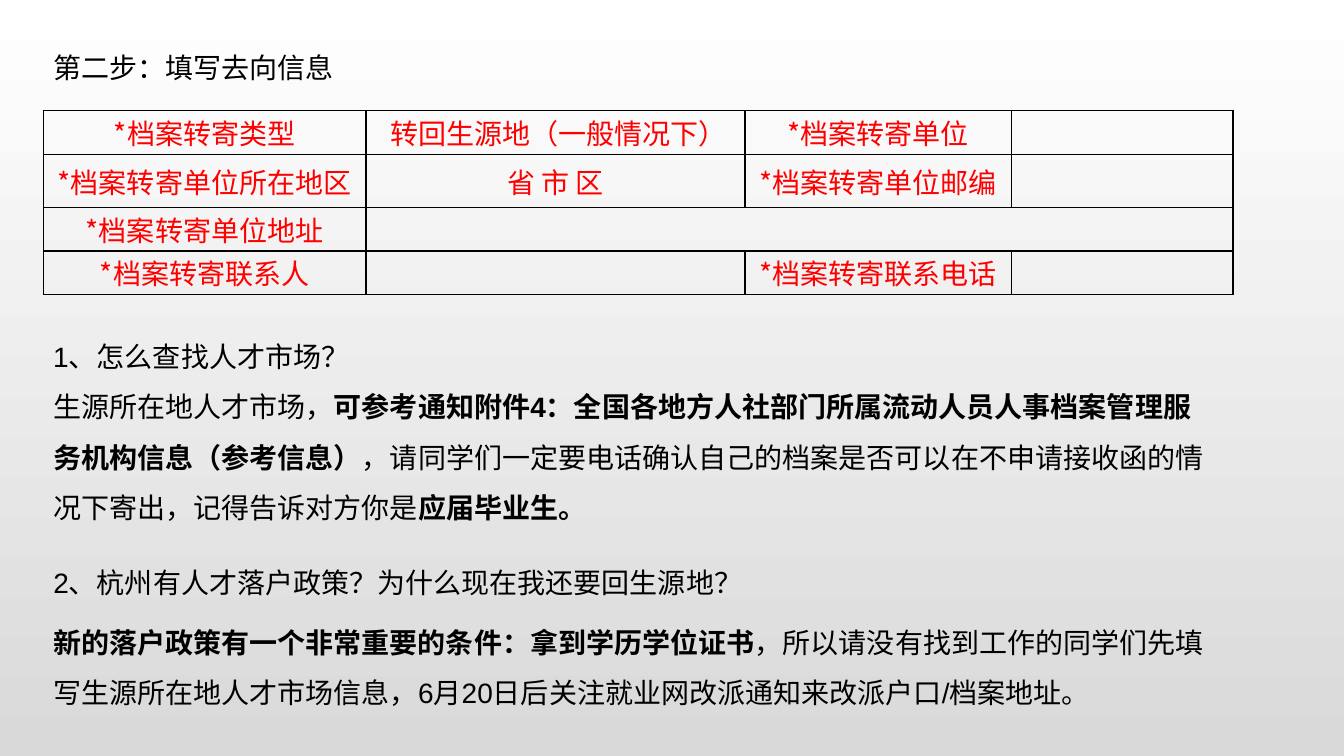
"""Build the slide on filling in where the student file is sent."""
from pptx import Presentation
from pptx import util as u
from pptx.dml.color import RGBColor
from pptx.enum import text
from pptx.oxml.xmlchemy import OxmlElement

HUES = {"ink": "000000", "red": "FF0000", "top": "FFFFFF", "base": "D9D9D9"}
LATIN, HAN = "Arial", "Noto Sans CJK SC"
SIZE = 20
WIDE, HIGH = 13.33, 7.5
LEFT, FULL = 0.43, 11.66

TITLE = "第二步：填写去向信息"
COLS = [3.2, 3.76, 2.64, 2.2]
ROWS = [0.43, 0.53, 0.43, 0.43]
FORM = [
    ["*档案转寄类型", " 转回生源地（一般情况下）", "*档案转寄单位", ""],
    ["*档案转寄单位所在地区", "省 市 区", "*档案转寄单位邮编", ""],
    ["*档案转寄单位地址", "", "", ""],
    ["*档案转寄联系人", "", "*档案转寄联系电话", ""],
]
NOTES = [
    (3.15, FULL, 2.12, [
        [("1、怎么查找人才市场？", False)],
        [("生源所在地人才市场，", False),
         ("可参考通知附件4：全国各地方人社部门所属流动人员人事档案管理服务机构信息（参考信息）", True),
         ("，请同学们一定要电话确认自己的档案是否可以在不申请接收函的情况下寄出，记得告诉对方你是", False),
         ("应届毕业生。", True)],
    ]),
    (5.39, 7.69, 0.6, [[("2、杭州有人才落户政策？为什么现在我还要回生源地？", False)]]),
    (5.99, FULL, 1.11, [
        [("新的落户政策有一个非常重要的条件：拿到学历学位证书", True),
         ("，所以请没有找到工作的同学们先填写生源所在地人才市场信息，"
          "6月20日后关注就业网改派通知来改派户口/档案地址。", False)],
    ]),
]


def hue(name):
    return RGBColor.from_string(HUES[name])


def style(para, color, face):
    font = para.font
    font.size, font.name = u.Pt(SIZE), face
    font.color.rgb = hue(color)
    han = OxmlElement("a:ea")
    han.set("typeface", HAN)
    para._p.pPr.find(".//{*}latin").addnext(han)


def write(shape, paras):
    frame = shape.text_frame
    frame.word_wrap = True
    frame.auto_size = text.MSO_AUTO_SIZE.NONE
    frame.vertical_anchor = text.MSO_ANCHOR.TOP
    for i, runs in enumerate(paras):
        para = frame.add_paragraph() if i else frame.paragraphs[0]
        para.line_spacing = 1.5
        para.alignment = text.PP_ALIGN.LEFT
        style(para, "ink", LATIN)
        for words, bold in runs:
            run = para.add_run()
            run.text, run.font.bold = words, bold


def border(cell):
    props = cell._tc.get_or_add_tcPr()
    for side in "LRTB":
        line = OxmlElement(f"a:ln{side}")
        line.set("w", str(u.Pt(1)))
        fill = OxmlElement("a:solidFill")
        color = OxmlElement("a:srgbClr")
        color.set("val", HUES["ink"])
        fill.append(color)
        line.append(fill)
        props.append(line)


def add_form(slide):
    box = [u.Inches(n) for n in (LEFT, 1.1, sum(COLS), sum(ROWS))]
    table = slide.shapes.add_table(len(ROWS), len(COLS), *box).table
    table.first_row = table.horz_banding = False
    for col, size in zip(table.columns, COLS):
        col.width = u.Inches(size)
    for r, (row, size) in enumerate(zip(FORM, ROWS)):
        table.rows[r].height = u.Inches(size)
        for c, words in enumerate(row):
            cell = table.cell(r, c)
            border(cell)
            cell.fill.background()
            cell.margin_left = cell.margin_right = u.Inches(0.07)
            cell.margin_top = cell.margin_bottom = 0
            cell.vertical_anchor = text.MSO_ANCHOR.MIDDLE
            para = cell.text_frame.paragraphs[0]
            para.text, para.alignment = words, text.PP_ALIGN.CENTER
            style(para, "red", HAN)
    table.cell(2, 1).merge(table.cell(2, 3))


def main():
    deck = Presentation()
    deck.slide_width, deck.slide_height = u.Inches(WIDE), u.Inches(HIGH)
    slide = deck.slides.add_slide(deck.slide_layouts[5])
    fill = slide.background.fill
    fill.gradient()
    fill.gradient_angle = 270
    for stop, name in zip(fill.gradient_stops, ("top", "base")):
        stop.color.rgb = hue(name)

    title = slide.shapes.title
    title.left, title.top = u.Inches(LEFT), u.Inches(0.28)
    title.width, title.height = u.Inches(6.67), u.Inches(0.6)
    write(title, [[(TITLE, False)]])
    add_form(slide)
    for top, width, height, paras in NOTES:
        box = [u.Inches(n) for n in (LEFT, top, width, height)]
        write(slide.shapes.add_textbox(*box), paras)
    deck.save("out.pptx")


if __name__ == "__main__":
    main()
